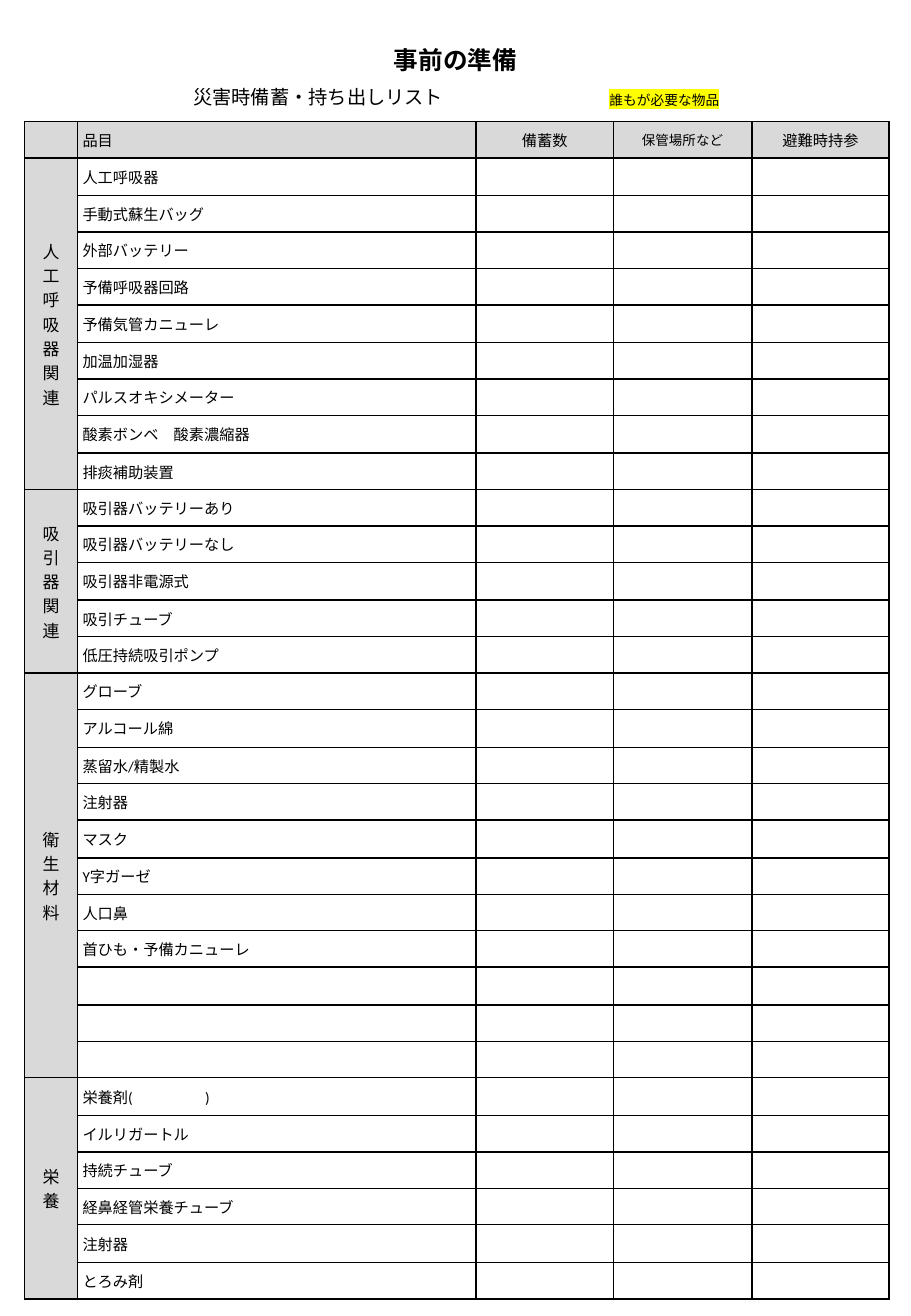
from dataclasses import dataclass

from lxml import etree
from pptx import Presentation
from pptx.dml.color import RGBColor
from pptx.enum.text import MSO_ANCHOR, PP_ALIGN
from pptx.oxml.ns import qn
from pptx.util import Pt

CENTER, JUSTIFY = PP_ALIGN.CENTER, PP_ALIGN.JUSTIFY
MIDDLE = MSO_ANCHOR.MIDDLE
EMU_PER_PX = 9144
TITLE_ONLY = 5


@dataclass(frozen=True)
class Theme:
    font: str = "Calibri"
    ink: str = "000000"
    header_fill: str = "D9D9D9"
    cell_fill: str = "FFFFFF"
    highlight: str = "FFFF00"
    title_size: float = 14.6
    subtitle_size: float = 11.4
    label_size: float = 8.1
    group_size: float = 10
    item_size: float = 9
    small_size: float = 8
    border_width: float = 1


THEME = Theme()
COLUMN_WIDTHS = [44, 328, 113, 114, 113]
HEADERS = [
    ("品目", JUSTIFY, THEME.item_size),
    ("備蓄数", CENTER, THEME.item_size),
    ("保管場所など", CENTER, THEME.small_size),
    ("避難時持参", CENTER, THEME.item_size),
]
GROUPS = [
    ("人工呼吸器関連", [
        "人工呼吸器", "手動式蘇生バッグ", "外部バッテリー", "予備呼吸器回路",
        "予備気管カニューレ", "加温加湿器", "パルスオキシメーター",
        "酸素ボンベ　酸素濃縮器", "排痰補助装置",
    ]),
    ("吸引器関連", [
        "吸引器バッテリーあり", "吸引器バッテリーなし", "吸引器非電源式",
        "吸引チューブ", "低圧持続吸引ポンプ",
    ]),
    ("衛生材料", [
        "グローブ", "アルコール綿", "蒸留水/精製水", "注射器", "マスク",
        "Y字ガーゼ", "人口鼻", "首ひも・予備カニューレ", "", "", "",
    ]),
    ("栄養", [
        "栄養剤(\t)", "イルリガートル", "持続チューブ", "経鼻経管栄養チューブ",
        "注射器", "とろみ剤",
    ]),
]


def px(length):
    return length * EMU_PER_PX


def add_run(paragraph, text, size, bold=False):
    run = paragraph.add_run()
    run.text = text
    run.font.name = THEME.font
    run.font.size = Pt(size)
    run.font.bold = bold
    run.font.color.rgb = RGBColor.from_string(THEME.ink)
    return run


def write_line(shape, box, text, size, bold=False):
    shape.left, shape.top, shape.width, shape.height = map(px, box)
    frame = shape.text_frame
    frame.word_wrap = True
    frame.vertical_anchor = MIDDLE
    frame.margin_left = frame.margin_right = 0
    frame.margin_top = frame.margin_bottom = 0
    paragraph = frame.paragraphs[0]
    paragraph.alignment = CENTER
    return add_run(paragraph, text, size, bold)


def highlight_run(run):
    highlight = etree.Element(qn("a:highlight"))
    etree.SubElement(highlight, qn("a:srgbClr"), val=THEME.highlight)
    run.font._element.find(qn("a:solidFill")).addnext(highlight)


def add_heading(slide, box):
    left, top, width, height = box
    title_height = height - 30
    write_line(slide.shapes.title, (left, top, width, title_height),
               "事前の準備", THEME.title_size, True)
    line_top = top + title_height
    subtitle = slide.shapes.add_textbox(0, 0, 0, 0)
    write_line(subtitle, (left + 130, line_top - 2, 224, 30),
               "災害時備蓄・持ち出しリスト", THEME.subtitle_size)
    label = slide.shapes.add_textbox(0, 0, 0, 0)
    highlight_run(write_line(label, (left + 461, line_top, 132, 30),
                             "誰もが必要な物品", THEME.label_size))


def format_cell(cell, color):
    cell.margin_left = cell.margin_right = px(4)
    cell.margin_top = cell.margin_bottom = 0
    cell.vertical_anchor = MIDDLE
    cell.fill.solid()
    cell.fill.fore_color.rgb = RGBColor.from_string(color)
    properties = cell._tc.get_or_add_tcPr()
    for position, side in enumerate(("lnL", "lnR", "lnT", "lnB")):
        line = etree.Element(qn(f"a:{side}"), w=str(Pt(THEME.border_width)))
        fill = etree.SubElement(line, qn("a:solidFill"))
        etree.SubElement(fill, qn("a:srgbClr"), val=THEME.ink)
        properties.insert(position, line)


def write_cell(cell, text, alignment, size):
    paragraph = cell.text_frame.paragraphs[0]
    paragraph.alignment = alignment
    if text:
        add_run(paragraph, text, size)
    else:
        etree.SubElement(paragraph._p, qn("a:endParaRPr"), sz=str(size * 100))
    if "\t" in text:
        stops = etree.SubElement(paragraph._p.get_or_add_pPr(), qn("a:tabLst"))
        etree.SubElement(stops, qn("a:tab"), pos=str(px(101)), algn="l")


def write_group(table, first_row, last_row, name):
    cell = table.cell(first_row, 0)
    cell.merge(table.cell(last_row, 0))
    write_cell(cell, name, CENTER, THEME.group_size)
    cell._tc.get_or_add_tcPr().set("vert", "eaVert")
    properties = cell.text_frame.paragraphs[0]._p.get_or_add_pPr()
    for margin in ("marL", "marR"):
        properties.set(margin, str(px(8)))


def add_supply_table(slide, box):
    height = box[3]
    row_count = 1 + sum(len(items) for _, items in GROUPS)
    table = slide.shapes.add_table(row_count, len(COLUMN_WIDTHS), *map(px, box)).table
    table.first_row = table.horz_banding = False
    for column, width in zip(table.columns, COLUMN_WIDTHS):
        column.width = px(width)
    bounds = [round(height * index / row_count) for index in range(row_count + 1)]
    for row, top, bottom in zip(table.rows, bounds, bounds[1:]):
        row.height = px(bottom - top)

    for row_index in range(row_count):
        for column_index in range(len(COLUMN_WIDTHS)):
            shaded = row_index == 0 or column_index == 0
            format_cell(table.cell(row_index, column_index),
                        THEME.header_fill if shaded else THEME.cell_fill)

    write_cell(table.cell(0, 0), "", CENTER, THEME.item_size)
    for column_index, header in enumerate(HEADERS, 1):
        write_cell(table.cell(0, column_index), *header)

    first_row = 1
    for name, items in GROUPS:
        for row_index, item in enumerate(items, first_row):
            write_cell(table.cell(row_index, 1), item, JUSTIFY, THEME.item_size)
            for column_index in range(2, len(COLUMN_WIDTHS)):
                write_cell(table.cell(row_index, column_index), "", CENTER, THEME.item_size)
            if row_index > first_row:
                write_cell(table.cell(row_index, 0), "", CENTER, THEME.item_size)
        write_group(table, first_row, first_row + len(items) - 1, name)
        first_row += len(items)


def main():
    presentation = Presentation()
    presentation.slide_width, presentation.slide_height = px(750), px(1083)
    slide = presentation.slides.add_slide(presentation.slide_layouts[TITLE_ONLY])
    add_heading(slide, (20, 32, 710, 65))
    add_supply_table(slide, (20, 100, sum(COLUMN_WIDTHS), 969))
    presentation.save("out.pptx")


if __name__ == "__main__":
    main()
